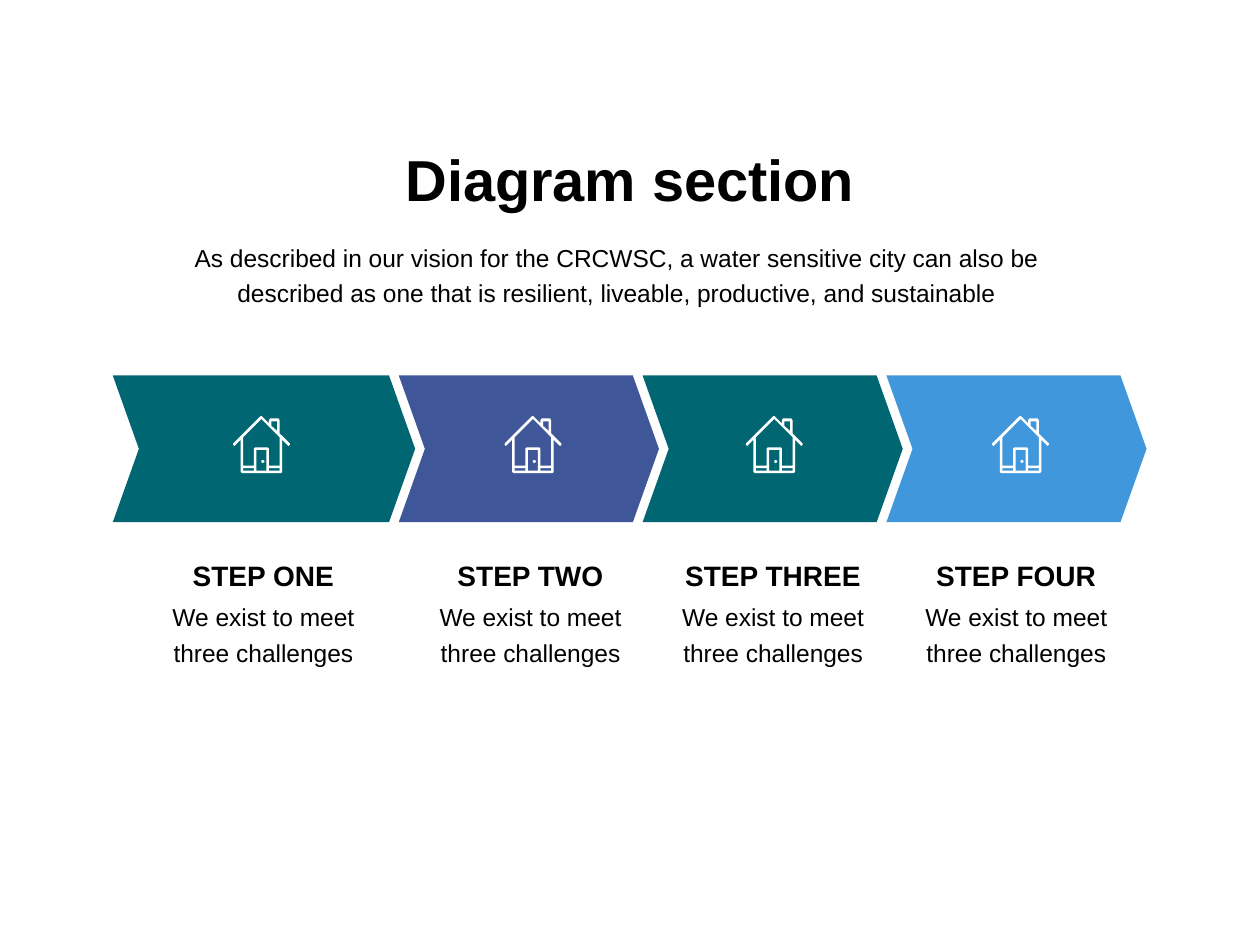
import dataclasses

import pptx
import pptx.dml.color
import pptx.enum.shapes
import pptx.enum.text
import pptx.util

RGBColor = pptx.dml.color.RGBColor
TEAL = RGBColor(0x00, 0x67, 0x72)
INDIGO = RGBColor(0x3F, 0x57, 0x99)
SKY = RGBColor(0x40, 0x97, 0xDB)
WHITE = RGBColor(0xFF, 0xFF, 0xFF)
BLACK = RGBColor(0x00, 0x00, 0x00)

# The slide is a grid of 20 columns by 15 rows, each cell one inch square.
CELL = pptx.util.Inches(1)
COLUMNS, ROWS = 20, 15

# Chevrons end at equal steps; the first one starts further left.
FIRST_TIP, TIP_PITCH = 6.59, 3.87
FIRST_CHEVRON_WIDTH, CHEVRON_WIDTH = 4.8, 4.13
CHEVRON_TOP, CHEVRON_HEIGHT = 5.96, 2.33
HOUSE_TOP = 6.6
HEADING_TOP, DETAIL_TOP, DETAIL_WIDTH = 8.82, 9.42, 3.25
DETAIL = "We exist to meet three challenges"


@dataclasses.dataclass
class Step:
    heading: str
    heading_width: float
    colour: RGBColor
    caption_middle: float
    house_left: float


STEPS = [
    Step("STEP ONE", 2.46, TEAL, 4.18, 3.7),
    Step("STEP TWO", 2.54, INDIGO, 8.42, 8.01),
    Step("STEP THREE", 3.01, TEAL, 12.27, 11.84),
    Step("STEP FOUR", 2.76, SKY, 16.13, 15.75),
]


def box(left, top, right, bottom):
    return [(left, top), (right, top), (right, bottom), (left, bottom)]


# Outlines of the house in hundredths of a grid cell; inner ones are openings.
HOUSE = [
    # roof, chimney and outer walls
    [(90, 44), (74, 28), (74, 7), (72, 4), (59, 4), (57, 7), (57, 12),
     (46, 1), (45, 0), (43, 1), (0, 44), (0, 46), (2, 48), (3, 47), (12, 38),
     (12, 89), (14, 91), (76, 91), (78, 89), (78, 38), (87, 47), (88, 48),
     (90, 46)],
    # room around the door frame
    [(74, 79), (57, 79), (57, 52), (55, 50), (35, 50), (33, 52), (33, 79),
     (16, 79), (16, 34), (45, 5), (74, 34)],
    # chimney opening
    [(61, 9), (70, 9), (70, 24), (61, 16)],
    # skirting, door and door knob
    box(16, 83, 33, 87),
    box(57, 83, 74, 87),
    box(37, 54, 53, 87),
    [(47, 75), (49, 74), (50, 72), (49, 71), (47, 70), (45, 71), (45, 72),
     (45, 74)],
]


def cells(count):
    return round(CELL * count)


def paint(shape, colour):
    shape.shadow.inherit = False
    shape.fill.solid()
    shape.fill.fore_color.rgb = colour
    shape.line.fill.background()


def add_text(slide, text, middle, top, width, height, size,
             bold=False, wrap=True):
    """Add centred text around the column position middle."""
    textbox = slide.shapes.add_textbox(
        cells(middle - width / 2), cells(top), cells(width), cells(height))
    frame = textbox.text_frame
    frame.word_wrap = wrap
    frame.auto_size = pptx.enum.text.MSO_AUTO_SIZE.SHAPE_TO_FIT_TEXT
    paragraph = frame.paragraphs[0]
    paragraph.text = text
    paragraph.alignment = pptx.enum.text.PP_ALIGN.CENTER
    if wrap:
        paragraph.line_spacing = 1.2
    paragraph.font.name = "Arial"
    paragraph.font.size = pptx.util.Pt(size)
    paragraph.font.bold = bold
    paragraph.font.color.rgb = BLACK


def add_chevron(slide, position, colour):
    width = CHEVRON_WIDTH if position else FIRST_CHEVRON_WIDTH
    tip = FIRST_TIP + position * TIP_PITCH
    chevron = slide.shapes.add_shape(
        pptx.enum.shapes.MSO_SHAPE.CHEVRON,
        cells(tip - width), cells(CHEVRON_TOP),
        cells(width), cells(CHEVRON_HEIGHT))
    chevron.adjustments[0] = 0.178
    paint(chevron, colour)


def add_house(slide, left):
    builder = slide.shapes.build_freeform(*HOUSE[0][0], scale=CELL / 100)
    builder.add_line_segments(HOUSE[0][1:], close=True)
    for opening in HOUSE[1:]:
        builder.move_to(*opening[0])
        builder.add_line_segments(opening[1:], close=True)
    paint(builder.convert_to_shape(cells(left), cells(HOUSE_TOP)), WHITE)


def add_caption(slide, step):
    add_text(slide, DETAIL, step.caption_middle, DETAIL_TOP,
             DETAIL_WIDTH, 1.22, 28)
    add_text(slide, step.heading, step.caption_middle, HEADING_TOP,
             step.heading_width, 0.64, 32, bold=True, wrap=False)


def main():
    presentation = pptx.Presentation()
    presentation.slide_width = cells(COLUMNS)
    presentation.slide_height = cells(ROWS)
    slide = presentation.slides.add_slide(presentation.slide_layouts[6])

    for position, step in reversed(list(enumerate(STEPS))):
        add_chevron(slide, position, step.colour)
    for step in STEPS:
        add_caption(slide, step)
    add_text(slide, "Diagram section", COLUMNS / 2, 2.24, 7.4, 1.21, 66,
             bold=True, wrap=False)
    add_text(slide, "As described in our vision for the CRCWSC, a water "
             "sensitive city can also be described as one that is resilient, "
             "liveable, productive, and sustainable",
             9.78, 3.71, 14.81, 1.22, 28)
    for step in STEPS:
        add_house(slide, step.house_left)

    presentation.save("out.pptx")


if __name__ == "__main__":
    main()
